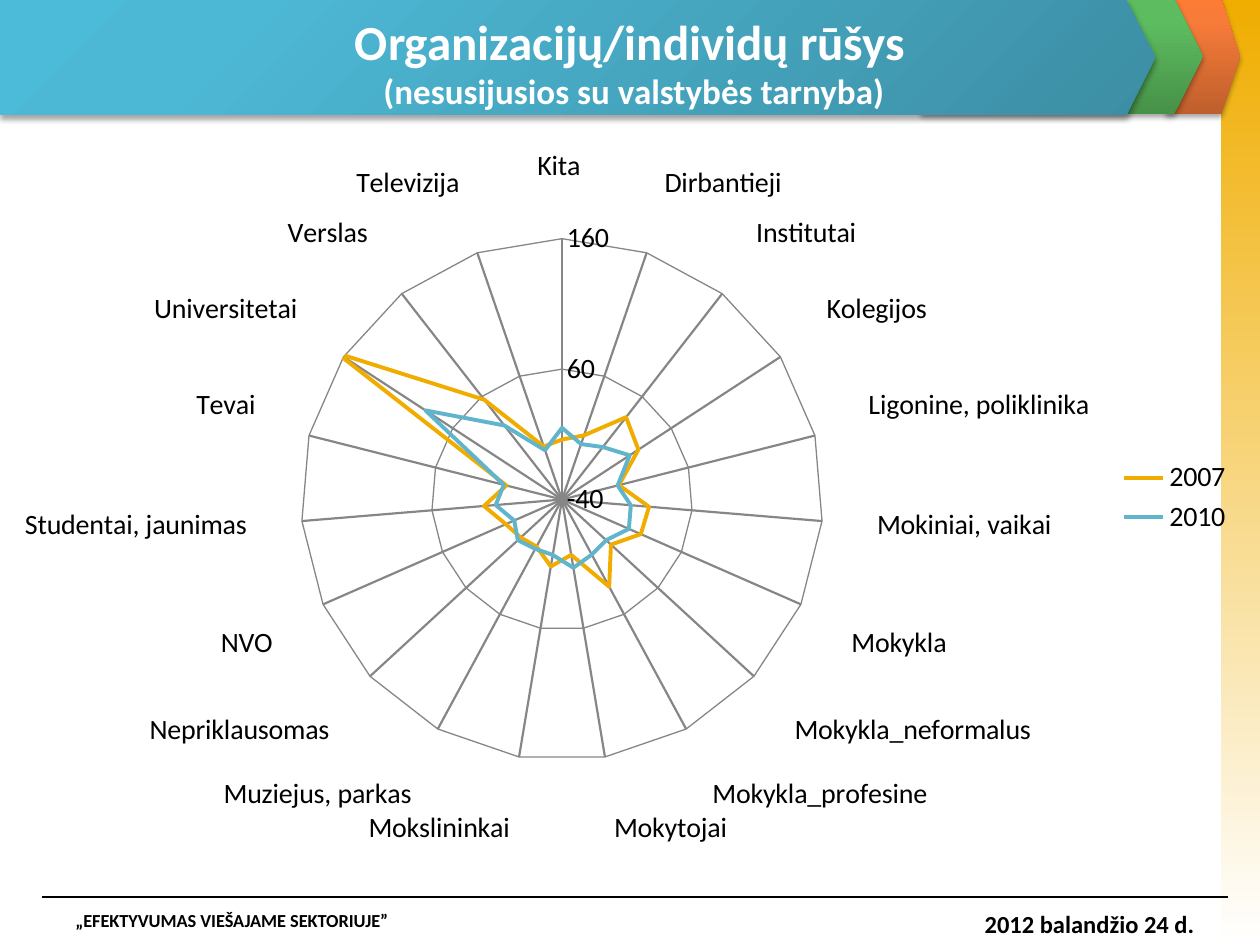
from pptx import Presentation, util as u
from pptx.chart.data import CategoryChartData
from pptx.dml.color import RGBColor
from pptx.enum import chart as ch, shapes, text
from pptx.oxml import parse_xml
from pptx.oxml.ns import nsdecls, qn

PX = 914400 / 126
BLACK = RGBColor(0, 0, 0)
WHITE = RGBColor(255, 255, 255)
GRAY = RGBColor(0x86, 0x86, 0x86)
GOLD = RGBColor(0xF0, 0xAD, 0x00)
SKY = RGBColor(0x60, 0xB5, 0xCC)
BLUES = [(0, RGBColor(0x3C, 0x8E, 0xA4)), (80, RGBColor(0x4D, 0xB8, 0xD5)),
         (100, RGBColor(0x4B, 0xBB, 0xD9))]
GREENS = [(0, RGBColor(0x47, 0x91, 0x49)), (80, RGBColor(0x5D, 0xBC, 0x5F)),
          (100, RGBColor(0x5B, 0xBF, 0x5E))]
ORANGES = [(0, RGBColor(0xBE, 0x5F, 0x2C)), (80, RGBColor(0xF7, 0x7B, 0x39)),
           (100, RGBColor(0xFC, 0x7B, 0x35))]
UP = '<a:lin ang="16200000" scaled="0"/>'
DOWN = '<a:lin ang="5400000" scaled="0"/>'
CORNER = '<a:path path="circle"><a:fillToRect l="100000" t="100000"/></a:path>'

CATEGORIES = ["Kita ", "Dirbantieji", "Institutai", "Kolegijos",
              "Ligonine, poliklinika", "Mokiniai, vaikai", "Mokykla",
              "Mokykla_neformalus", "Mokykla_profesine", "Mokytojai",
              "Mokslininkai", "Muziejus, parkas", "Nepriklausomas", "NVO",
              "Studentai, jaunimas", "Tevai", "Universitetai", "Verslas",
              "Televizija"]
SERIES = [
    ("2007", GOLD, [6, 12, 40, 30, 5, 27, 26, 11, 36, 3, 12, 1, 3, 7, 20, 4,
                    162, 57, 3]),
    ("2010", SKY, [15, 5, 11, 22, 4, 13, 16, 6, 8, 13, 3, 3, 6, 0, 11, 6,
                   85, 32, 0]),
]


def px(*values):
    return [u.Emu(round(v * PX)) for v in values]


def add_gradient_shape(s, kind, box, stops, direction, shadow=True):
    sp = s.shapes.add_shape(kind, *px(*box))
    if kind == shapes.MSO_SHAPE.PENTAGON:
        sp.adjustments[0] = 0.25
    sp.fill.background()
    sp.line.fill.background()
    sp.shadow.inherit = False
    props = sp._element.spPr
    marks = "".join(f'<a:gs pos="{pos * 1000}"><a:srgbClr val="{color}"/></a:gs>'
                    for pos, color in stops)
    props.replace(props.find(qn("a:noFill")), parse_xml(
        f'<a:gradFill {nsdecls("a")} rotWithShape="1"><a:gsLst>{marks}</a:gsLst>'
        f'{direction}</a:gradFill>'))
    if shadow:
        props.find(qn("a:effectLst")).append(parse_xml(
            f'<a:outerShdw {nsdecls("a")} blurRad="39370" dist="22860" dir="5400000" '
            'rotWithShape="0"><a:srgbClr val="000000"><a:alpha val="35000"/>'
            '</a:srgbClr></a:outerShdw>'))


def add_rule(s, x1, y, x2):
    line = s.shapes.add_connector(shapes.MSO_CONNECTOR.STRAIGHT, *px(x1, y, x2, y))
    line.line.color.rgb = BLACK
    line.line.width = u.Pt(0.75)
    line._element.spPr.append(parse_xml(f'<a:effectLst {nsdecls("a")}/>'))


def add_run(p, words, size, color):
    r = p.add_run()
    r.text = words
    r.font.name = "Calibri"
    r.font.size = u.Pt(size)
    r.font.bold = True
    r.font.color.rgb = color


def add_footer(s, box, words, size, align):
    tf = s.shapes.add_textbox(*px(*box)).text_frame
    tf.word_wrap = True
    p = tf.paragraphs[0]
    p.alignment = align
    add_run(p, words, size, BLACK)


def fill_title(s):
    title = s.shapes.title
    s.shapes._spTree.append(title._element)
    title.left, title.top, title.width, title.height = px(63, 18, 1134, 87)
    tf = title.text_frame
    tf.word_wrap = True
    tf.auto_size = text.MSO_AUTO_SIZE.NONE
    tf.vertical_anchor = text.MSO_ANCHOR.MIDDLE
    p = tf.paragraphs[0]
    p.alignment = text.PP_ALIGN.CENTER
    add_run(p, "Organizacijų/individų rūšys", 28, WHITE)
    p.add_line_break()
    add_run(p, " (nesusijusios su valstybės tarnyba)", 20, WHITE)


def add_radar(s, box):
    data = CategoryChartData(number_format="###0")
    data.categories = CATEGORIES
    for name, _, values in SERIES:
        data.add_series(name, values)
    chart = s.shapes.add_chart(ch.XL_CHART_TYPE.RADAR, *px(*box), data).chart
    chart.has_title = False
    chart.font.name = "Calibri"
    chart.font.size = u.Pt(16)
    chart.font.color.rgb = BLACK
    chart.has_legend = True
    chart.legend.position = ch.XL_LEGEND_POSITION.RIGHT
    chart.legend.include_in_layout = False
    chart.plots[0].vary_by_categories = False
    for axis in (chart.category_axis, chart.value_axis):
        axis.major_tick_mark = axis.minor_tick_mark = ch.XL_TICK_MARK.NONE
        axis.has_major_gridlines = True
        axis.major_gridlines.format.line.color.rgb = GRAY
    chart.category_axis.format.line.fill.background()
    axis = chart.value_axis
    axis.format.line.color.rgb = GRAY
    axis.format.line.width = u.Pt(1.25)
    axis.minimum_scale, axis.maximum_scale, axis.major_unit = -40, 160, 100
    axis.tick_labels.number_format = "###0"
    axis.tick_labels.number_format_is_linked = False
    for series, (_, color, _) in zip(chart.plots[0].series, SERIES):
        series.smooth = False
        series.marker.style = ch.XL_MARKER_STYLE.NONE
        series.format.line.color.rgb = color
        series.format.line.width = u.Pt(2.25)


def main():
    prs = Presentation()
    prs.slide_width, prs.slide_height = px(1260, 945)
    s = prs.slides.add_slide(prs.slide_layouts[5])
    arrow = shapes.MSO_SHAPE.PENTAGON
    add_gradient_shape(s, shapes.MSO_SHAPE.RECTANGLE, (1221, 0, 39, 945),
                       [(0, GOLD), (100, WHITE)], DOWN, shadow=False)
    add_gradient_shape(s, arrow, (1166, -1, 74, 115), ORANGES, UP)
    add_gradient_shape(s, arrow, (921, -1, 282, 115), GREENS, UP)
    add_rule(s, 42, 897, 1228)
    add_gradient_shape(s, arrow, (0, 0, 1155, 115), BLUES, CORNER)
    fill_title(s)
    add_footer(s, (63, 903, 756, 42), "„EFEKTYVUMAS VIEŠAJAME SEKTORIUJE”", 10.5,
               text.PP_ALIGN.LEFT)
    add_footer(s, (927, 903, 280, 42), "2012 balandžio 24 d.", 14,
               text.PP_ALIGN.RIGHT)
    add_radar(s, (0, 66, 1245, 863))
    prs.save("out.pptx")


if __name__ == "__main__":
    main()
